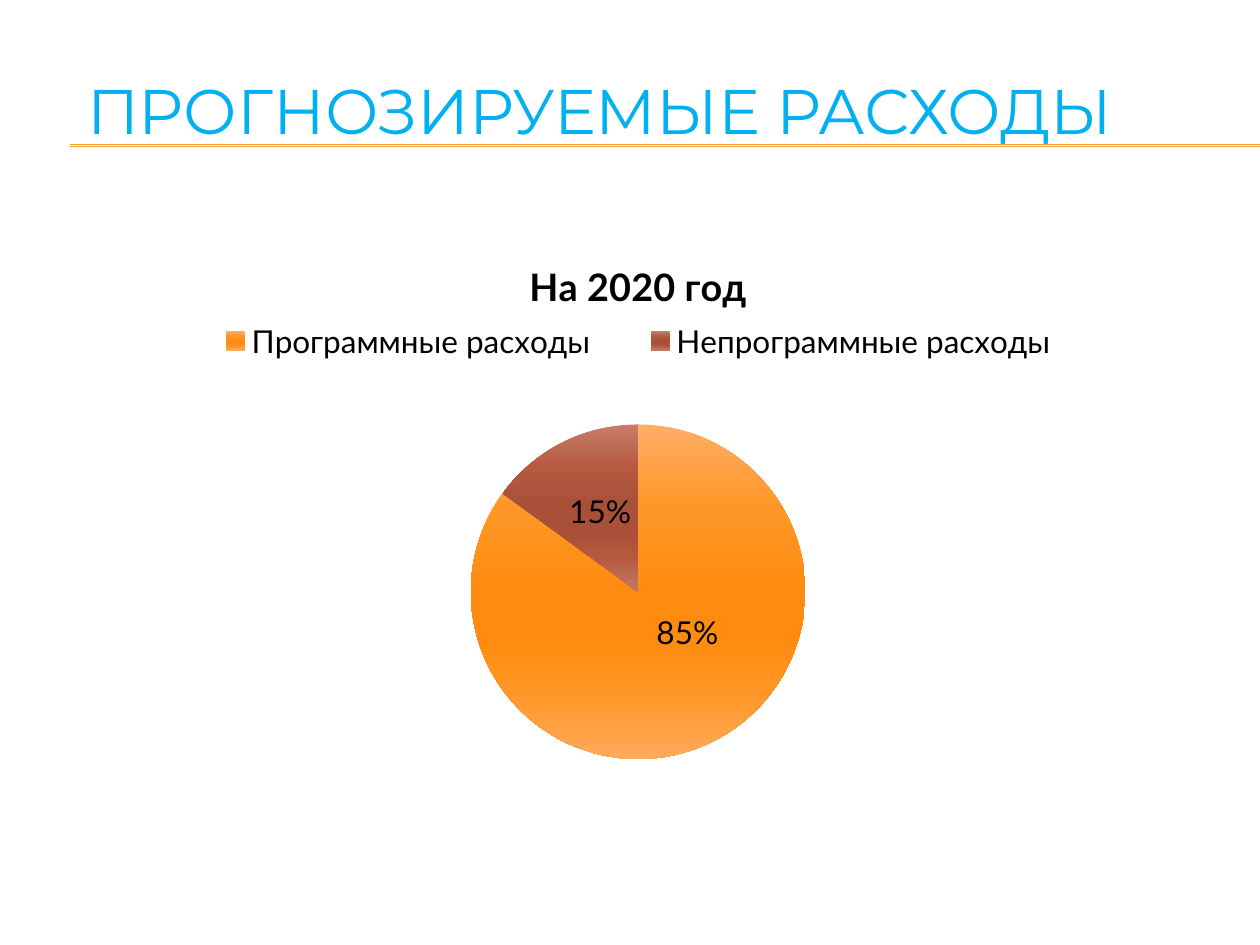
from dataclasses import dataclass

from lxml import etree
from pptx import Presentation
from pptx.chart.data import CategoryChartData
from pptx.dml.color import RGBColor
from pptx.enum.chart import XL_CHART_TYPE, XL_LABEL_POSITION, XL_LEGEND_POSITION
from pptx.enum.shapes import MSO_CONNECTOR
from pptx.enum.text import MSO_ANCHOR, PP_ALIGN
from pptx.oxml.ns import qn
from pptx.util import Cm, Pt

PIE = XL_CHART_TYPE.PIE
TOP = XL_LEGEND_POSITION.TOP
CENTER = XL_LABEL_POSITION.CENTER
STRAIGHT = MSO_CONNECTOR.STRAIGHT
MIDDLE = MSO_ANCHOR.MIDDLE
LEFT = PP_ALIGN.LEFT


@dataclass
class Rule:
    left: float
    right: float
    y: float


@dataclass
class Slice:
    name: str
    value: int
    stops: dict[int, str]
    label_shift: tuple[float, float]


RULES = [Rule(1.42, 25.4, 2.92), Rule(1.42, 25.4, 2.95)]
SLICES = [
    Slice("Программные расходы", 85,
          {0: "FFAE66", 25: "FF9727", 50: "FF8C10", 65: "FF8C10", 80: "FF9727", 100: "FFAA5B"},
          (0.01, -0.06)),
    Slice("Непрограммные расходы", 15,
          {0: "C67D6B", 25: "B65A40", 50: "A85038", 65: "A85038", 80: "B65A40", 100: "C47866"},
          (0, -0.01)),
]


def rgb(color: str) -> RGBColor:
    return RGBColor.from_string(color)


def format_font(font, name: str, size: float, color: str, bold: bool = False) -> None:
    font.name = name
    font.size = Pt(size)
    font.bold = bold
    font.color.rgb = rgb(color)


def add_rule(slide, rule: Rule) -> None:
    line = slide.shapes.add_connector(
        STRAIGHT, Cm(rule.left), Cm(rule.y), Cm(rule.right), Cm(rule.y))
    line.line.color.rgb = rgb("F0A22E")
    line.line.width = Pt(0.75)
    etree.SubElement(line._element.spPr, qn("a:effectLst"))


def make_layout(**values) -> etree._Element:
    layout = etree.Element(qn("c:layout"))
    manual = etree.SubElement(layout, qn("c:manualLayout"))
    for tag, value in values.items():
        etree.SubElement(manual, qn(f"c:{tag}"), val=str(value))
    return layout


def set_plot_layout(chart, **values) -> None:
    area = chart._chartSpace.chart.plotArea
    for old in area.findall(qn("c:layout")):
        area.remove(old)
    area.insert(0, make_layout(layoutTarget="inner", xMode="edge", yMode="edge", **values))


def set_legend_layout(legend, **values) -> None:
    element = legend._element
    for old in element.findall(qn("c:layout")):
        element.remove(old)
    element.find(qn("c:legendPos")).addnext(make_layout(xMode="edge", yMode="edge", **values))


def fill_gradient(fill, stops: dict[int, str]) -> None:
    fill.gradient()
    fill.gradient_angle = 270
    stop_list = fill._xPr.find(qn("a:gradFill")).find(qn("a:gsLst"))
    for old in list(stop_list):
        stop_list.remove(old)
    for percent, color in stops.items():
        stop = etree.SubElement(stop_list, qn("a:gs"), pos=str(percent * 1000))
        etree.SubElement(stop, qn("a:srgbClr"), val=color)


def format_slice(series, i: int, part: Slice) -> None:
    point = series.points[i]
    fill_gradient(point.format.fill, part.stops)
    point.format.line.fill.background()
    point.data_label.position = CENTER
    label = series._element.find(qn("c:dLbls")).findall(qn("c:dLbl"))[i]
    label.find(qn("c:showVal")).set("val", "0")
    label.find(qn("c:showPercent")).set("val", "1")
    x, y = part.label_shift
    label.find(qn("c:idx")).addnext(make_layout(x=x, y=y))


def add_pie(slide) -> None:
    data = CategoryChartData()
    data.categories = [part.name for part in SLICES]
    data.add_series("Series 1", [part.value for part in SLICES])
    chart = slide.shapes.add_chart(
        PIE, Cm(1.5), Cm(4.72), Cm(22.73), Cm(11.63), data).chart
    format_font(chart.font, "Lato", 18, "000000")

    chart.has_title = True
    tf = chart.chart_title.text_frame
    tf.text = "На 2020 год"
    format_font(tf.paragraphs[0].runs[0].font, "Lato", 21.6, "000000", bold=True)

    chart.has_legend = True
    chart.legend.position = TOP
    chart.legend.include_in_layout = False
    set_legend_layout(chart.legend, x=0.09, y=0.14, w=0.82, h=0.09)
    set_plot_layout(chart, x=0.35, y=0.33, w=0.3, h=0.58)

    plot = chart.plots[0]
    plot.vary_by_categories = True
    series = plot.series[0]
    labels = series.data_labels
    labels.show_percentage = True
    labels.show_value = False
    labels.number_format = "0%"
    labels.number_format_is_linked = False
    labels.position = CENTER
    for i, part in enumerate(SLICES):
        format_slice(series, i, part)


def add_title(slide) -> None:
    title = slide.shapes.title
    title.left, title.top = Cm(1.5), Cm(0.74)
    title.width, title.height = Cm(22.73), Cm(2.92)
    tf = title.text_frame
    tf.text = "ПРОГНОЗИРУЕМЫЕ РАСХОДЫ"
    tf.vertical_anchor = MIDDLE
    p = tf.paragraphs[0]
    p.alignment = LEFT
    format_font(p.runs[0].font, "Montserrat", 36, "00B0F0")


def main() -> None:
    prs = Presentation()
    prs.slide_width, prs.slide_height = Cm(25.4), Cm(19.05)
    slide = prs.slides.add_slide(prs.slide_layouts[5])
    for rule in RULES:
        add_rule(slide, rule)
    add_title(slide)
    add_pie(slide)
    prs.save("out.pptx")


if __name__ == "__main__":
    main()
